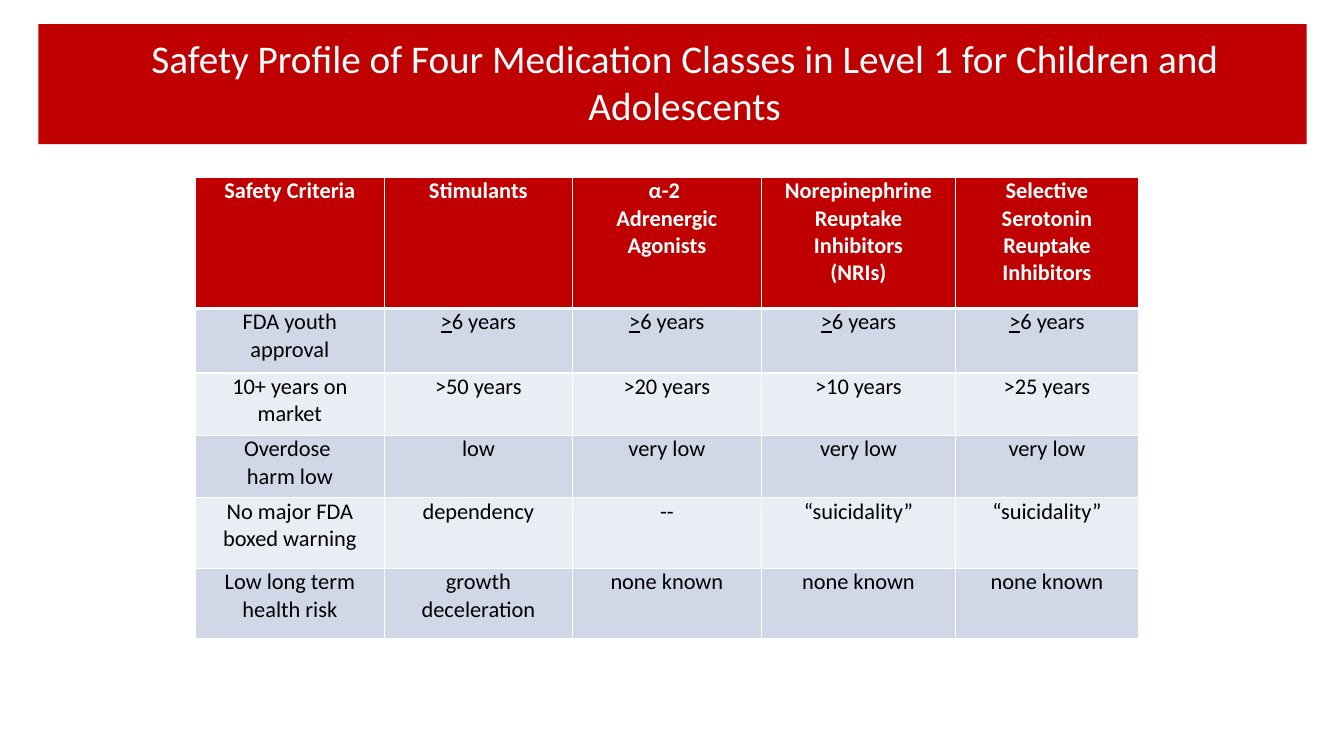
"""Build the slide on the safety profile of four medication classes."""
from lxml import etree
from pptx import Presentation
from pptx.dml.color import RGBColor
from pptx.enum import shapes, text
from pptx.oxml import ns
from pptx.util import Inches, Pt

TITLE = "Safety Profile of Four Medication Classes in Level 1 for Children and Adolescents"
RED, WHITE, BLACK = "C00000", "FFFFFF", "000000"
BANDS = ["D0D8E8", "E9EDF4"]
AT_LEAST_6 = (">", "6 years")
ROWS = [
    ["Safety Criteria", "Stimulants", "α-2 \nAdrenergic\nAgonists",
     "Norepinephrine\nReuptake\nInhibitors\n(NRIs)",
     "Selective Serotonin Reuptake Inhibitors"],
    ["FDA youth approval"] + [AT_LEAST_6] * 4,
    ["10+ years on market", ">50 years", ">20 years", ">10 years", ">25 years"],
    ["Overdose \nharm low", "low", "very low", "very low", "very low"],
    ["No major FDA boxed warning", "dependency", "--", "“suicidality”", "“suicidality”"],
    ["Low long term health risk", "growth deceleration"] + ["none known"] * 3,
]
COL_WIDTHS = [1.87, 1.87, 1.87, 1.93, 1.81]
ROW_HEIGHTS = [1.3, 0.64, 0.62, 0.62, 0.7, 0.7]
CELL_FORMAT = {"margin_left": Inches(0.07), "margin_right": Inches(0.07),
               "margin_top": 0, "margin_bottom": 0,
               "vertical_anchor": text.MSO_ANCHOR.TOP}


def rgb(color):
    return RGBColor.from_string(color)


def paint(shape, color):
    shape.fill.solid()
    shape.fill.fore_color.rgb = rgb(color)


def style(p, size, color, bold=False):
    p.alignment = text.PP_ALIGN.CENTER
    for r in p.runs:
        for name, value in {"name": "Calibri", "size": Pt(size), "bold": bold}.items():
            setattr(r.font, name, value)
        r.font.color.rgb = rgb(color)


def add_border(cell, side, width):
    tcPr = cell._tc.get_or_add_tcPr()
    ln = etree.SubElement(tcPr, ns.qn("a:ln" + side), w=str(Pt(width)))
    fill = etree.SubElement(ln, ns.qn("a:solidFill"))
    etree.SubElement(fill, ns.qn("a:srgbClr"), val=WHITE)


def fill_cell(cell, content, row):
    heavy = {0: "B", 1: "T"}.get(row)
    for name, value in CELL_FORMAT.items():
        setattr(cell, name, value)
    for side in "LRTB":
        add_border(cell, side, 3 if side == heavy else 1)
    paint(cell, BANDS[(row - 1) % 2] if row else RED)
    tf = cell.text_frame
    if isinstance(content, tuple):
        p = tf.paragraphs[0]
        for part in content:
            p.add_run().text = part
        p.runs[0].font.underline = True
    else:
        tf.text = content
    for p in tf.paragraphs:
        style(p, 16, BLACK if row else WHITE, bold=row == 0)


def add_title(s):
    title = s.shapes.title
    box = {"left": 0.66, "top": 0.29, "width": 12.26, "height": 1.04}
    for name, value in box.items():
        setattr(title, name, Inches(value))
    tf = title.text_frame
    tf.text = TITLE
    tf.word_wrap = True
    tf.vertical_anchor = text.MSO_ANCHOR.MIDDLE
    style(tf.paragraphs[0], 28, WHITE)
    band = s.shapes.add_shape(shapes.MSO_SHAPE.RECTANGLE, Inches(0.38), Inches(0.24),
                              Inches(12.58), Inches(1.19))
    paint(band, RED)
    band.line.fill.background()
    band.shadow.inherit = False
    title.element.addprevious(band.element)


def add_safety_table(s):
    frame = s.shapes.add_table(len(ROWS), len(COL_WIDTHS), Inches(1.94), Inches(1.76),
                               Inches(sum(COL_WIDTHS)), Inches(sum(ROW_HEIGHTS)))
    table = frame.table
    for column, width in zip(table.columns, COL_WIDTHS):
        column.width = Inches(width)
    for i, (height, contents) in enumerate(zip(ROW_HEIGHTS, ROWS)):
        table.rows[i].height = Inches(height)
        for j, content in enumerate(contents):
            fill_cell(table.cell(i, j), content, i)


def main():
    prs = Presentation()
    prs.slide_width, prs.slide_height = Inches(13.33), Inches(7.5)
    s = prs.slides.add_slide(prs.slide_layouts[5])
    add_title(s)
    add_safety_table(s)
    prs.save("out.pptx")


if __name__ == "__main__":
    main()
